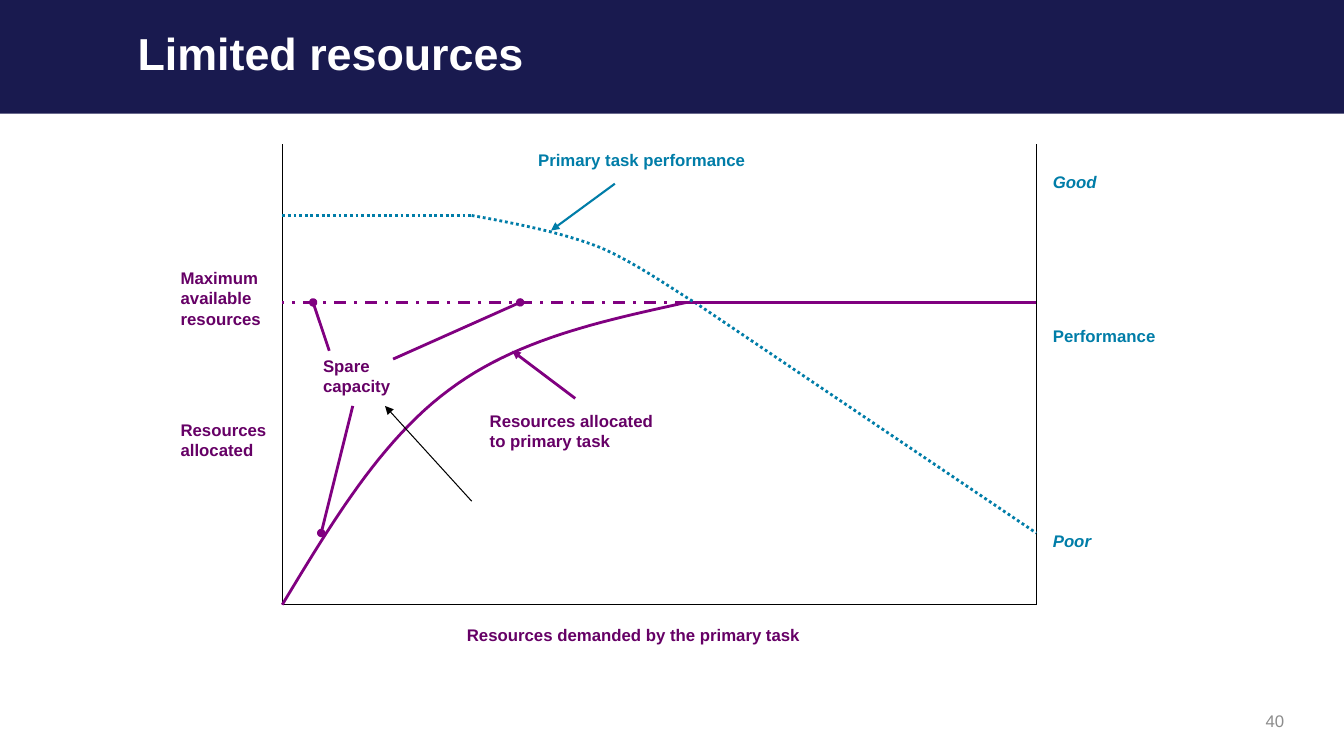
from lxml import etree
from pptx import Presentation
from pptx.dml.color import RGBColor
from pptx.enum.dml import MSO_LINE
from pptx.enum.shapes import MSO_CONNECTOR, MSO_SHAPE
from pptx.enum.text import MSO_ANCHOR, PP_ALIGN
from pptx.oxml.ns import qn
from pptx.util import Inches, Pt

STRAIGHT = MSO_CONNECTOR.STRAIGHT
RECTANGLE = MSO_SHAPE.RECTANGLE
DOTTED = MSO_LINE.ROUND_DOT
DASH_DOT = MSO_LINE.DASH_DOT
TOP, MIDDLE = MSO_ANCHOR.TOP, MSO_ANCHOR.MIDDLE
ALIGN_LEFT, ALIGN_RIGHT = PP_ALIGN.LEFT, PP_ALIGN.RIGHT

NAVY = RGBColor(0x19, 0x1A, 0x4F)
TEAL = RGBColor(0x00, 0x7D, 0xA8)
PURPLE = RGBColor(0x80, 0x00, 0x80)
PLUM = RGBColor(0x66, 0x00, 0x66)
GREY = RGBColor(0x8C, 0x8C, 0x8C)
BLACK = RGBColor(0x00, 0x00, 0x00)
WHITE = RGBColor(0xFF, 0xFF, 0xFF)

X_LEFT, X_KNEE, X_FULL, X_DROP, X_RIGHT = 21, 35.1, 51.1, 51.7, 77.1
Y_TOP, Y_GOOD, Y_MAX, Y_POOR, Y_BASE = 19.1, 28.5, 40, 70.5, 80


class Deck:
    """Draws styled elements on one slide, placed in percent of its size."""

    font = "Arial"

    def __init__(self, prs):
        self.prs = prs
        self.s = prs.slides.add_slide(prs.slide_layouts[6])

    def x(self, share):
        return round(self.prs.slide_width * share / 100)

    def y(self, share):
        return round(self.prs.slide_height * share / 100)

    def band(self, left, top, width, height, color):
        sp = self.s.shapes.add_shape(
            RECTANGLE, self.x(left), self.y(top), self.x(width), self.y(height))
        sp.shadow.inherit = False
        sp.fill.solid()
        sp.fill.fore_color.rgb = color
        sp.line.fill.background()

    def text(self, text, left, top, width, height, color, size=12, bold=True,
             italic=False, align=ALIGN_LEFT, anchor=TOP, spacing=1.0):
        sp = self.s.shapes.add_textbox(
            self.x(left), self.y(top), self.x(width), self.y(height))
        tf = sp.text_frame
        tf.word_wrap = True
        tf.vertical_anchor = anchor
        tf.text = text
        p = tf.paragraphs[0]
        p.alignment = align
        p.line_spacing = spacing
        font = p.runs[0].font
        font.name, font.size = self.font, Pt(size)
        font.bold, font.italic = bold, italic
        font.color.rgb = color

    def stroke(self, line, color, weight, dash):
        line.color.rgb = color
        line.width = Pt(weight)
        if dash is not None:
            line.dash_style = dash

    def line(self, start, end, color, weight=2, dash=None, tip=None):
        sp = self.s.shapes.add_connector(
            STRAIGHT, self.x(start[0]), self.y(start[1]),
            self.x(end[0]), self.y(end[1]))
        self.stroke(sp.line, color, weight, dash)
        props = sp._element.spPr
        if tip:
            etree.SubElement(props.find(qn("a:ln")), qn("a:tailEnd"), type=tip)
        etree.SubElement(props, qn("a:effectLst"))

    def curve(self, points, color, weight=2, dash=None, steps=24):
        track = []
        for i in range(0, len(points) - 1, 3):
            a, b, c, d = points[i:i + 4]
            for n in range(1, steps + 1):
                t = n / steps
                u = 1 - t
                px, py = (u**3 * a[k] + 3 * u * u * t * b[k]
                          + 3 * u * t * t * c[k] + t**3 * d[k] for k in (0, 1))
                track.append((self.x(px), self.y(py)))
        builder = self.s.shapes.build_freeform(
            self.x(points[0][0]), self.y(points[0][1]))
        builder.add_line_segments(track, close=False)
        sp = builder.convert_to_shape()
        sp.shadow.inherit = False
        sp.fill.background()
        self.stroke(sp.line, color, weight, dash)


def main():
    prs = Presentation()
    prs.slide_width, prs.slide_height = Inches(13.33), Inches(7.5)
    deck = Deck(prs)

    deck.band(0, 0, 100, 15.05, NAVY)
    deck.text("40", 72.5, 92.7, 23.8, 5.3, GREY, bold=False,
              align=ALIGN_RIGHT, anchor=MIDDLE)
    deck.text("Limited resources", 9.5, -0.1, 86.8, 15, WHITE, size=32,
              anchor=MIDDLE, spacing=0.9)

    corners = [(X_LEFT, Y_TOP), (X_LEFT, Y_BASE),
               (X_RIGHT, Y_BASE), (X_RIGHT, Y_TOP)]
    for start, end in zip(corners, corners[1:]):
        deck.line(start, end, BLACK, 0.75)

    deck.line((X_LEFT, Y_GOOD), (X_KNEE, Y_GOOD), TEAL, dash=DOTTED)
    deck.line((X_DROP, Y_MAX), (X_RIGHT, Y_POOR), TEAL, dash=DOTTED)
    deck.line((X_FULL, Y_MAX), (X_RIGHT, Y_MAX), PURPLE)
    deck.curve([(X_FULL, Y_MAX), (44.7, 42.5), (38.4, 44.9), (33.4, 51.6),
                (28.35, 58.25), (24.7, 69.1), (X_LEFT, Y_BASE)], PURPLE)
    deck.line((X_FULL, Y_MAX), (X_LEFT, Y_MAX), PURPLE, dash=DASH_DOT)
    deck.curve([(X_KNEE, Y_GOOD), (38.5, 29.6), (41.9, 30.8), (44.6, 32.7),
                (47.3, 34.7), (50.5, 38.8), (X_DROP, Y_MAX)], TEAL, dash=DOTTED)

    for text, left, top, width, rows, color, italic in [
        ("Primary task performance", 39.3, 19.1, 19.5, 1, TEAL, False),
        ("Resources allocated to primary task", 35.7, 53.7, 14.8, 2, PLUM, False),
        ("Resources demanded by the primary task", 34, 82, 29.5, 1, PLUM, False),
        ("Maximum available resources", 12.7, 34.8, 7.7, 3, PLUM, False),
        ("Resources allocated", 12.7, 54.8, 8.2, 2, PLUM, False),
        ("Spare capacity", 23.3, 46.4, 8.2, 2, PLUM, False),
        ("Good", 77.6, 22.1, 19.5, 1, TEAL, True),
        ("Performance", 77.6, 42.4, 19.5, 1, TEAL, False),
        ("Poor", 77.6, 69.6, 19.5, 1, TEAL, True),
    ]:
        deck.text(text, left, top, width, 1.33 + 2.67 * rows, color, italic=italic)

    for start, end, color, weight, tip in [
        ((45.75, 24.3), (41, 30.5), TEAL, 1.5, "triangle"),
        ((42.8, 52.7), (38.1, 46.4), PURPLE, 2, "triangle"),
        ((24.5, 46.4), (23.3, Y_MAX), PURPLE, 2, "oval"),
        ((29.25, 47.5), (38.7, Y_MAX), PURPLE, 2, "oval"),
        ((26.25, 53.7), (23.9, Y_POOR), PURPLE, 2, "oval"),
        ((X_KNEE, 66.3), (28.65, 53.7), BLACK, 0.75, "triangle"),
    ]:
        deck.line(start, end, color, weight, tip=tip)

    prs.save("out.pptx")


if __name__ == "__main__":
    main()
